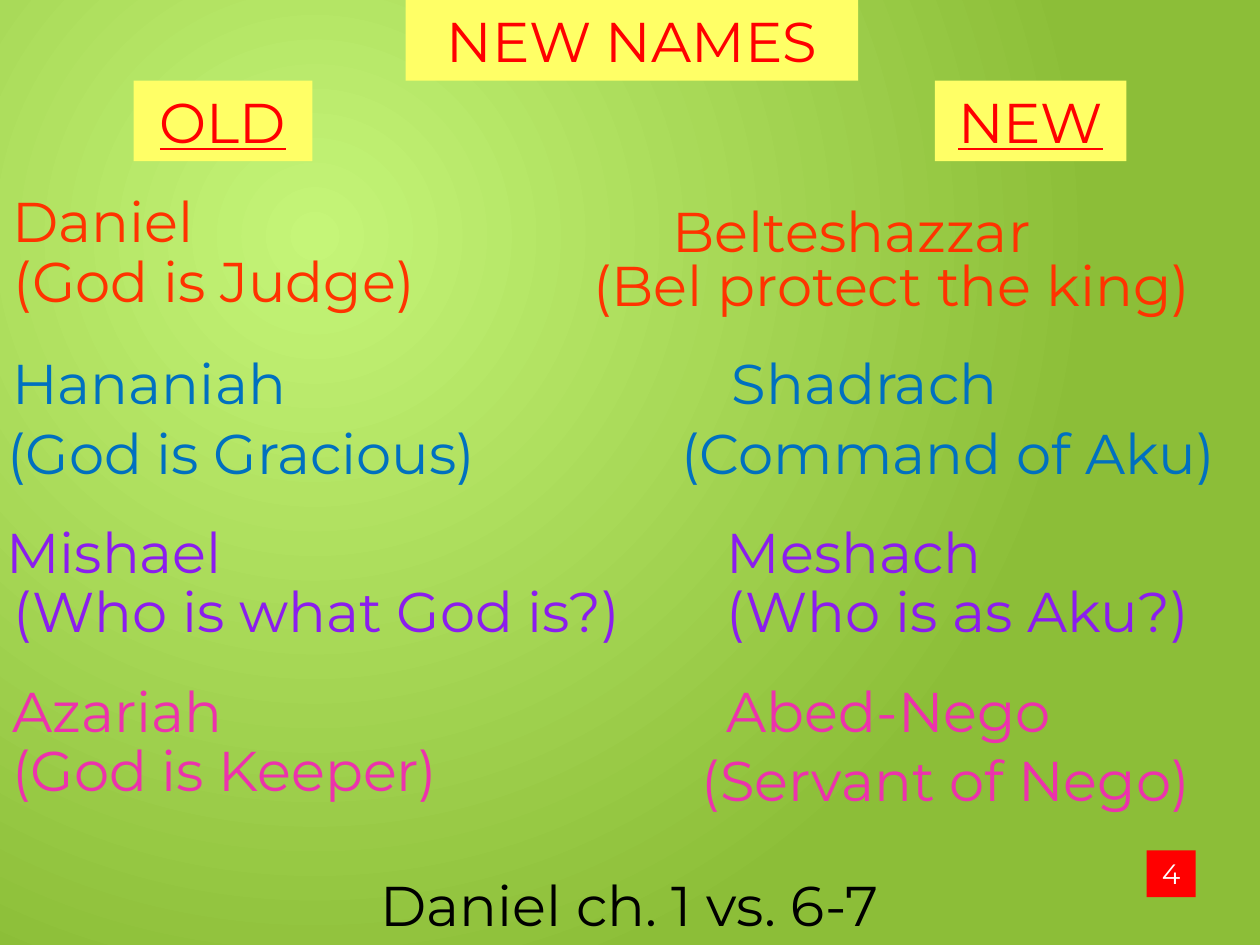
from collections import namedtuple

from lxml import etree
from pptx import Presentation
from pptx import util as u
from pptx.dml.color import RGBColor
from pptx.enum import shapes, text
from pptx.oxml import ns

Box = namedtuple("Box", "left top width height")
Line = namedtuple("Line", "wording column row columns")

WIDTH, HEIGHT = u.Inches(10), u.Inches(7.5)
COLUMN, ROW = WIDTH / 100, HEIGHT / 75
LINE_ROWS = 6.4
FONT = "Montserrat"
COLORS = {
    "glow": "C5F578", "leaf": "8CBE38", "label": "FFFF66", "red": "FF0000",
    "orange": "FF3300", "blue": "0070C0", "purple": "8B1DEE", "pink": "EC32AC",
    "black": "000000", "white": "FFFFFF",
}
OLD_SIDE, NEW_SIDE = 0, 50
PAIRS = [
    ("orange", 14.3,
     [Line("Daniel", 0, 0, 21.5), Line("(God is Judge)", 0.1, 4.8, 44.1)],
     [Line("Belteshazzar", 2.4, 0.8, 37.8), Line("(Bel protect the king)", -3.9, 5.1, 57.5)]),
    ("blue", 27.2,
     [Line("Hananiah", 0, 0, 36.2), Line("(God is Gracious)", -0.4, 5.5, 55.1)],
     [Line("Shadrach", 7.1, 0, 26), Line("(Command of Aku)", 3.1, 5.5, 48)]),
    ("purple", 40.6,
     [Line("Mishael", -0.5, 0, 21.9), Line("(Who is what God is?)", 0.1, 4.7, 56.4)],
     [Line("Meshach", 6.7, 0, 24.4), Line("(Who is as Aku?)", 6.7, 4.7, 43.3)]),
    ("pink", 53.2,
     [Line("Azariah", 0, 0, 25.2), Line("(God is Keeper)", 0, 4.7, 41.4)],
     [Line("Abed-Nego", 6.7, 0, 34.3), Line("(Servant of Nego)", 4.7, 5.5, 47.1)]),
]


def color(name):
    """Return the named palette colour."""
    return RGBColor.from_string(COLORS[name])


def place(box):
    """Turn a box in columns and rows into slide lengths."""
    return (round(box.left * COLUMN), round(box.top * ROW),
            round(box.width * COLUMN), round(box.height * ROW))


def write(shape, wording, ink, size=32, align=None, underline=None):
    """Set the wording and type style of a shape."""
    frame = shape.text_frame
    frame.word_wrap = True
    frame.auto_size = text.MSO_AUTO_SIZE.SHAPE_TO_FIT_TEXT
    para = frame.paragraphs[0]
    para.text = wording
    para.alignment = align
    para.font.name = FONT
    para.font.size = u.Pt(size)
    para.font.underline = underline
    para.font.color.rgb = color(ink)


def add_background(page):
    """Fill the page with a round glow near its upper left."""
    fill = page.background.fill
    fill.gradient()
    for stop, name, position in zip(fill.gradient_stops, ("glow", "leaf"), (0, 1)):
        stop.color.rgb = color(name)
        stop.position = position
    linear = page.element.find(".//" + ns.qn("a:lin"))
    circle = etree.Element(ns.qn("a:path"), path="circle")
    etree.SubElement(circle, ns.qn("a:fillToRect"),
                     l="50000", t="50000", r="100000", b="100000")
    linear.getparent().replace(linear, circle)


def add_line(page, box, wording, ink, align=None):
    """Add one line of plain text in the box."""
    write(page.shapes.add_textbox(*place(box)), wording, ink, align=align)


def add_label(page, box, wording, fill="label", ink="red", size=32, underline=None):
    """Add a filled rectangle with centred text in the box."""
    label = page.shapes.add_shape(shapes.MSO_SHAPE.RECTANGLE, *place(box))
    label.shadow.inherit = False
    label.fill.solid()
    label.fill.fore_color.rgb = color(fill)
    label.line.fill.background()
    write(label, wording, ink, size, text.PP_ALIGN.CENTER, underline)


def add_name(page, box, lines, ink):
    """Add a name and its meaning relative to the box."""
    for line in lines:
        spot = Box(box.left + line.column, box.top + line.row, line.columns, LINE_ROWS)
        add_line(page, spot, line.wording, ink)


def add_headings(page, box):
    """Add the title and the two column headings below the top of the box."""
    below = box.top + LINE_ROWS
    add_label(page, Box(box.left + 32.2, box.top, 35.9, LINE_ROWS), "NEW NAMES")
    add_label(page, Box(box.left + 10.6, below, 14.2, LINE_ROWS), "OLD", underline=True)
    add_label(page, Box(box.left + 74.2, below, 15.2, LINE_ROWS), "NEW", underline=True)


def add_footer(page, box):
    """Add the Bible reference and the page number at the foot of the box."""
    bottom = box.top + box.height
    add_line(page, Box(box.left + 23.7, bottom - LINE_ROWS, 52.6, LINE_ROWS),
             "Daniel ch. 1 vs. 6-7", "black", text.PP_ALIGN.CENTER)
    add_label(page, Box(box.left + 91, bottom - 7.5, 3.9, 3.7), "4", "red", "white", 16)


def main():
    """Build and save the slide."""
    deck = Presentation()
    deck.slide_width, deck.slide_height = WIDTH, HEIGHT
    page = deck.slides.add_slide(deck.slide_layouts[6])
    whole = Box(0, 0, 100, 75)
    add_background(page)
    for ink, top, old, new in PAIRS:
        add_name(page, Box(OLD_SIDE, top, 50, 13), old, ink)
        add_name(page, Box(NEW_SIDE, top, 50, 13), new, ink)
    add_headings(page, whole)
    add_footer(page, whole)
    deck.save("out.pptx")


if __name__ == "__main__":
    main()
